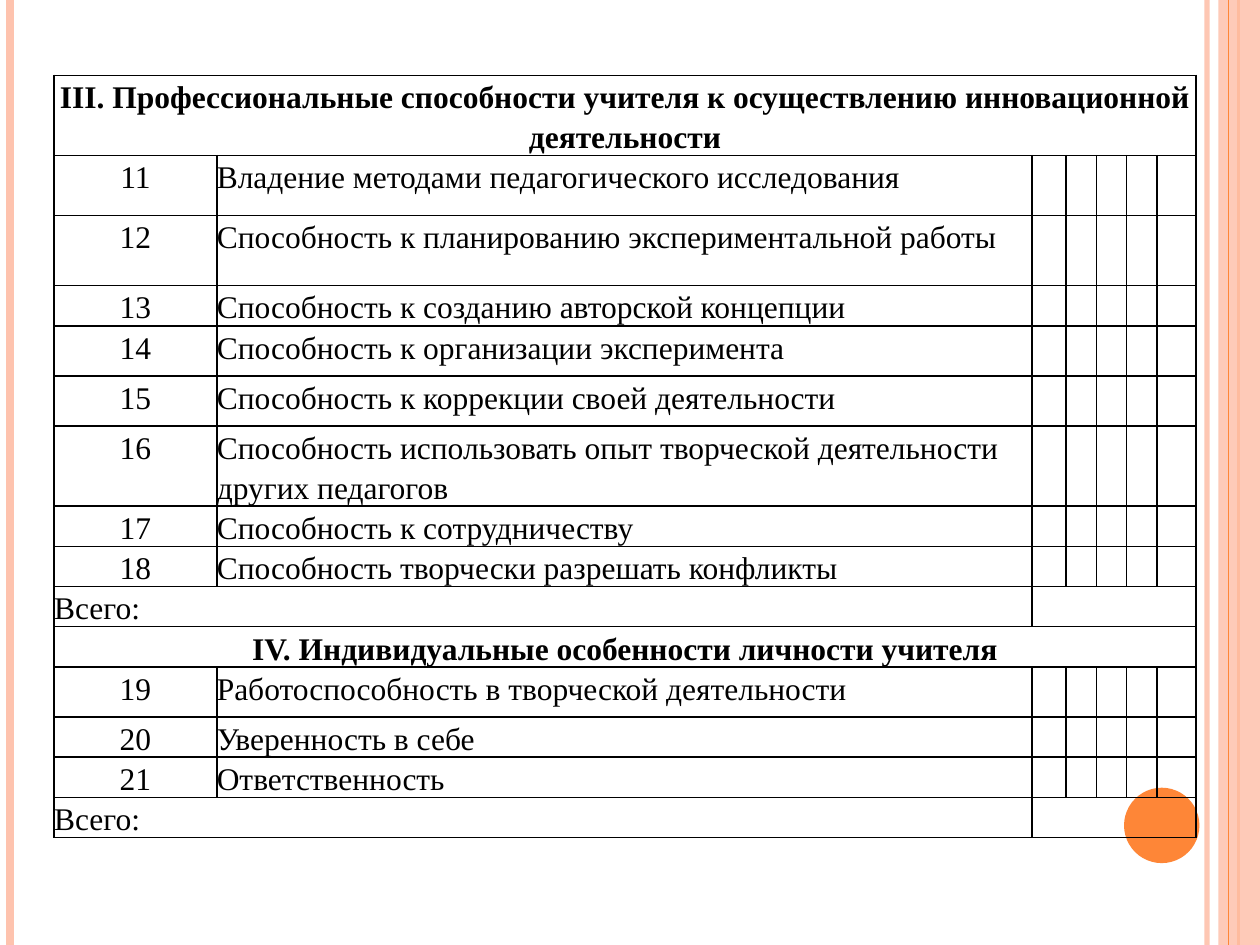
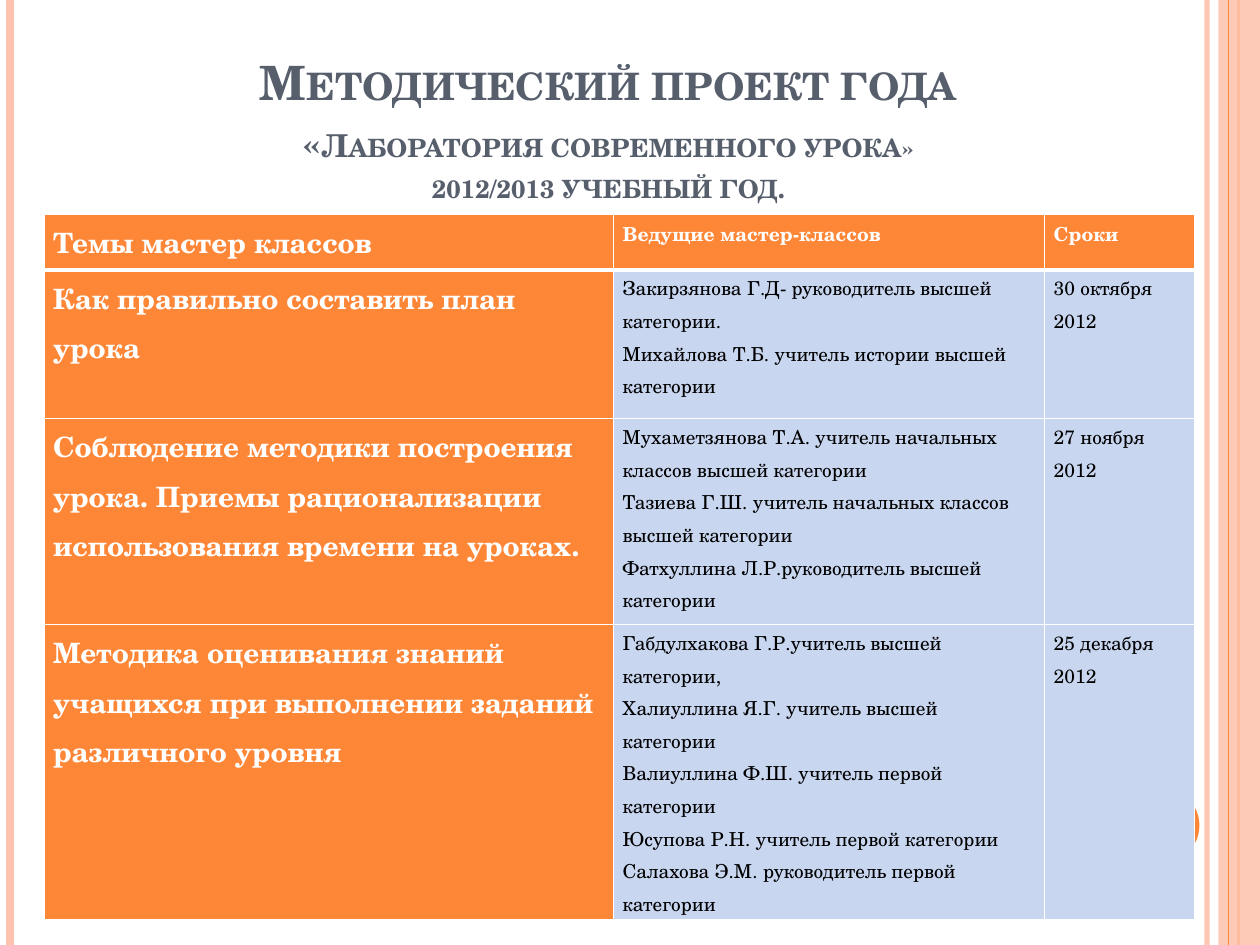
"""Builds two slides: a teacher self-assessment form and a plan of master classes."""
from dataclasses import dataclass
from typing import Optional, Sequence

from lxml.etree import SubElement
from pptx import Presentation
from pptx.dml.color import RGBColor
from pptx.enum.shapes import MSO_CONNECTOR, MSO_SHAPE
from pptx.enum.text import MSO_ANCHOR, MSO_AUTO_SIZE, PP_ALIGN as Align
from pptx.oxml.ns import qn
from pptx.util import Cm, Pt

COLORS = {
    "accent": "FE8637", "blush": "FEC3AE", "title": "575F6D",
    "ink": "000000", "paper": "FFFFFF", "cell": "C8D6F0",
}
SERIF = "Times New Roman"
SCHOOL = "TeX Gyre Schola"
PAGE_WIDTH, PAGE_HEIGHT = 25.4, 19.05
PLAIN_TABLE_STYLE = "{2D5ABB26-0587-4C30-8999-92F81FD0307C}"


@dataclass(frozen=True)
class Stripe:
    """A vertical line down the whole page."""
    left: float
    width: float
    color: str
    opacity: int = 100


@dataclass(frozen=True)
class Patch:
    """A filled shape without outline."""
    kind: MSO_SHAPE
    box: tuple[float, float, float, float]
    color: str
    opacity: int = 100


@dataclass(frozen=True)
class FormRow:
    """A row of the form: numbered item, or a heading or total without a number."""
    height: float
    text: str
    number: Optional[int] = None
    heading: bool = False


@dataclass(frozen=True)
class MasterClass:
    """A topic with its leaders and date."""
    height: float
    topic: str
    leaders: tuple[str, ...]
    date: tuple[str, ...]


DECORATION = (
    Stripe(24.33, 3, "blush", 93),
    Stripe(0.2, 4.5, "blush"),
    Stripe(24.97, 1.5, "accent"),
    Patch(MSO_SHAPE.RECTANGLE, (24.56, 0, 0.84, PAGE_HEIGHT), "blush", 87),
    Stripe(24.77, 0.75, "accent"),
    Patch(MSO_SHAPE.OVAL, (22.66, 15.88, 1.52, 1.52), "accent"),
)

FORM_COLUMNS = (3.28, 16.43, 0.69, 0.61, 0.61, 0.61, 0.79)
FORM_ROWS = (
    FormRow(1.61, "III. Профессиональные способности учителя к осуществлению "
            "инновационной деятельности", heading=True),
    FormRow(1.21, "Владение методами педагогического исследования", 11),
    FormRow(1.41, "Способность к планированию экспериментальной работы", 12),
    FormRow(0.81, "Способность к созданию авторской концепции", 13),
    FormRow(1.01, "Способность к организации эксперимента", 14),
    FormRow(1.01, "Способность к коррекции своей деятельности", 15),
    FormRow(1.61, "Способность использовать опыт творческой деятельности "
            "других педагогов", 16),
    FormRow(0.81, "Способность к сотрудничеству", 17),
    FormRow(0.81, "Способность творчески разрешать конфликты", 18),
    FormRow(0.81, "Всего:"),
    FormRow(0.81, "IV. Индивидуальные особенности личности учителя", heading=True),
    FormRow(1.01, "Работоспособность в творческой деятельности", 19),
    FormRow(0.81, "Уверенность в себе", 20),
    FormRow(0.81, "Ответственность", 21),
    FormRow(0.81, "Всего:"),
)

PLAN_COLUMNS = (11.48, 8.69, 3.02)
PLAN_HEADINGS = ("Темы мастер классов", "Ведущие мастер-классов", "Сроки")
MASTER_CLASSES = (
    MasterClass(3.0, "Как правильно составить план урока", (
        "Закирзянова Г.Д- руководитель высшей категории.",
        "Михайлова Т.Б. учитель истории высшей категории",
    ), ("30 октября", "2012")),
    MasterClass(4.15, "Соблюдение методики построения урока. Приемы рационализации "
                "использования времени на уроках.", (
        "Мухаметзянова Т.А. учитель начальных классов высшей категории",
        "Тазиева Г.Ш. учитель начальных классов высшей категории",
        "Фатхуллина Л.Р.руководитель высшей категории",
    ), ("27 ноября", "2012")),
    MasterClass(5.96, "Методика оценивания знаний учащихся при выполнении заданий "
                "различного уровня", (
        "Габдулхакова Г.Р.учитель высшей категории,",
        "Халиуллина Я.Г. учитель высшей категории",
        "Валиуллина Ф.Ш. учитель первой категории",
        "Юсупова Р.Н. учитель первой категории",
        "Салахова Э.М. руководитель первой категории",
    ), ("25 декабря", "2012")),
)

TITLE_LINES = (
    (("Методический проект года", 27),),
    (("«", 27), ("Лаборатория современного урока»", 18)),
    (("2012/2013 учебный год.", 18),),
)


def rgb(name: str) -> RGBColor:
    """Look up a named colour."""
    return RGBColor.from_string(COLORS[name])


def add_span(para, text: str, *, font: str = SCHOOL, size: float = 11,
             color: str = "ink", bold: bool = False, small_caps: bool = False) -> None:
    """Append formatted text to a paragraph."""
    span = para.add_run()
    span.text = text
    span.font.name, span.font.size, span.font.bold = font, Pt(size), bold
    span.font.color.rgb = rgb(color)
    if small_caps:
        span.font._element.set("cap", "small")


def next_paragraph(frame, index: int):
    """Return the first paragraph of a frame, or a new one after it."""
    return frame.add_paragraph() if index else frame.paragraphs[0]


def write_cell(cell, lines: Sequence[str], *, align: Align = Align.LEFT, **look) -> None:
    """Write one paragraph per line into a table cell."""
    for index, line in enumerate(lines):
        para = next_paragraph(cell.text_frame, index)
        para.alignment, para.line_spacing = align, 1.15
        add_span(para, line, **look)


def set_opacity(shape, percent: int) -> None:
    """Make the colour of a shape or line partly transparent."""
    if percent < 100:
        color = next(shape._element.spPr.iter(qn("a:srgbClr")))
        SubElement(color, qn("a:alpha"), val=str(percent * 1000))


def draw_stripe(page, stripe: Stripe) -> None:
    """Draw a vertical line."""
    left = Cm(stripe.left)
    line = page.shapes.add_connector(MSO_CONNECTOR.STRAIGHT, left, 0, left, Cm(PAGE_HEIGHT))
    line.line.color.rgb = rgb(stripe.color)
    line.line.width = Pt(stripe.width)
    SubElement(line._element.spPr, qn("a:effectLst"))
    set_opacity(line, stripe.opacity)


def draw_patch(page, patch: Patch) -> None:
    """Draw a filled shape."""
    shape = page.shapes.add_shape(patch.kind, *map(Cm, patch.box))
    shape.shadow.inherit = False
    shape.fill.solid()
    shape.fill.fore_color.rgb = rgb(patch.color)
    shape.line.fill.background()
    set_opacity(shape, patch.opacity)


def decorate(page) -> None:
    """Draw the bands and disc that every slide shares."""
    for item in DECORATION:
        if isinstance(item, Stripe):
            draw_stripe(page, item)
        else:
            draw_patch(page, item)


def add_grid(page, left: float, top: float, columns: Sequence[float], rows: Sequence[float]):
    """Add a table without a style, sized by its columns and rows."""
    table = page.shapes.add_table(len(rows), len(columns), Cm(left), Cm(top),
                                  Cm(sum(columns)), Cm(sum(rows))).table
    table.first_row = table.horz_banding = False
    table._tbl.tblPr.find(qn("a:tableStyleId")).text = PLAIN_TABLE_STYLE
    for column, width in zip(table.columns, columns):
        column.width = Cm(width)
    for row, height in zip(table.rows, rows):
        row.height = Cm(height)
    return table


def style_cell(cell, *, border: str, fill: Optional[str] = None,
               inset: float = 0, bottom: float = 1) -> None:
    """Set the margins, borders and fill of a cell."""
    cell.margin_left = cell.margin_right = Cm(inset)
    cell.margin_top = cell.margin_bottom = 0
    properties = cell._tc.get_or_add_tcPr()
    for side, width in (("L", 1), ("R", 1), ("T", 1), ("B", bottom)):
        edge = SubElement(properties, qn(f"a:ln{side}"), w=str(Pt(width)))
        paint = SubElement(edge, qn("a:solidFill"))
        SubElement(paint, qn("a:srgbClr"), val=COLORS[border])
    if fill:
        cell.fill.solid()
        cell.fill.fore_color.rgb = rgb(fill)
    else:
        cell.fill.background()


def build_form(page) -> None:
    """Draw the self-assessment form."""
    decorate(page)
    table = add_grid(page, 1.09, 1.52, FORM_COLUMNS, [row.height for row in FORM_ROWS])
    for cell in table.iter_cells():
        style_cell(cell, border="ink")
    last = len(FORM_COLUMNS) - 1
    look = {"font": SERIF, "size": 18}
    for index, row in enumerate(FORM_ROWS):
        first = table.cell(index, 0)
        if row.heading:
            first.merge(table.cell(index, last))
            write_cell(first, [row.text], align=Align.CENTER, bold=True, **look)
        elif row.number is None:
            first.merge(table.cell(index, 1))
            table.cell(index, 2).merge(table.cell(index, last))
            write_cell(first, [row.text], **look)
        else:
            write_cell(first, [str(row.number)], align=Align.CENTER, **look)
            write_cell(table.cell(index, 1), [row.text], **look)


def write_title(title) -> None:
    """Place and format the title in small capitals."""
    title.left, title.top, title.width, title.height = map(Cm, (2.31, 0.91, 19.91, 4.19))
    frame = title.text_frame
    frame.auto_size, frame.vertical_anchor = MSO_AUTO_SIZE.NONE, MSO_ANCHOR.BOTTOM
    frame.margin_bottom = Cm(0.97)
    for index, spans in enumerate(TITLE_LINES):
        para = next_paragraph(frame, index)
        para.alignment = Align.CENTER
        for text, size in spans:
            add_span(para, text, size=size, color="title", bold=True, small_caps=True)


def build_plan(page) -> None:
    """Draw the plan of master classes."""
    decorate(page)
    write_title(page.shapes.title)
    heights = [1.12, *(item.height for item in MASTER_CLASSES)]
    table = add_grid(page, 0.89, 4.32, PLAN_COLUMNS, heights)
    rows = [[(heading,) for heading in PLAN_HEADINGS]]
    rows += [[(item.topic,), item.leaders, item.date] for item in MASTER_CLASSES]
    for row_index, row in enumerate(rows):
        for column_index, lines in enumerate(row):
            cell = table.cell(row_index, column_index)
            strong = row_index == 0 or column_index == 0
            style_cell(cell, border="paper", fill="accent" if strong else "cell",
                       inset=0.18, bottom=1 if row_index else 3)
            write_cell(cell, lines, size=11 if column_index else 16,
                       color="paper" if strong else "ink", bold=strong)


def main() -> None:
    """Build and save the deck."""
    deck = Presentation()
    deck.slide_width, deck.slide_height = Cm(PAGE_WIDTH), Cm(PAGE_HEIGHT)
    title_only, blank = deck.slide_layouts[5], deck.slide_layouts[6]
    build_form(deck.slides.add_slide(blank))
    build_plan(deck.slides.add_slide(title_only))
    deck.save("out.pptx")


if __name__ == "__main__":
    main()
